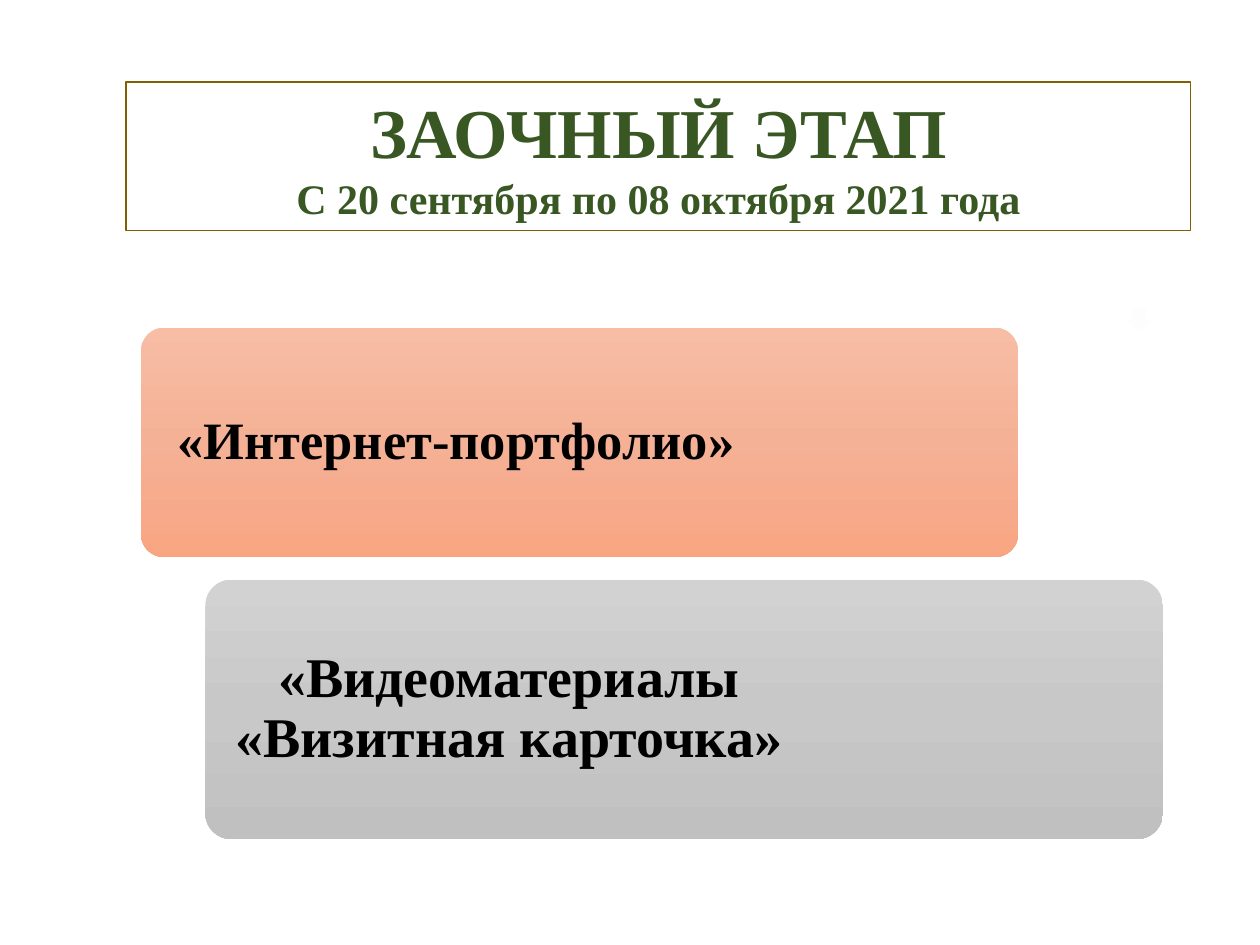
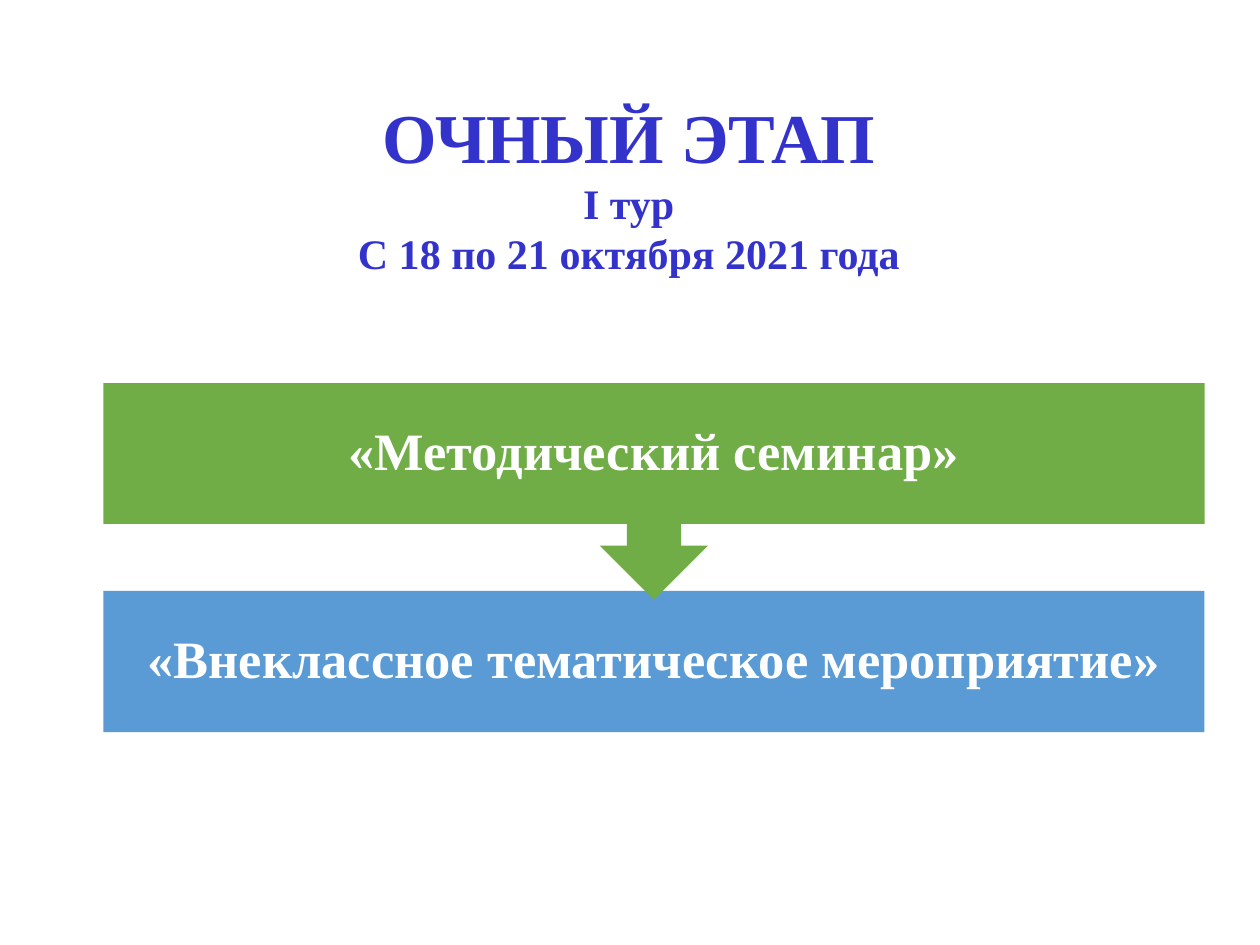
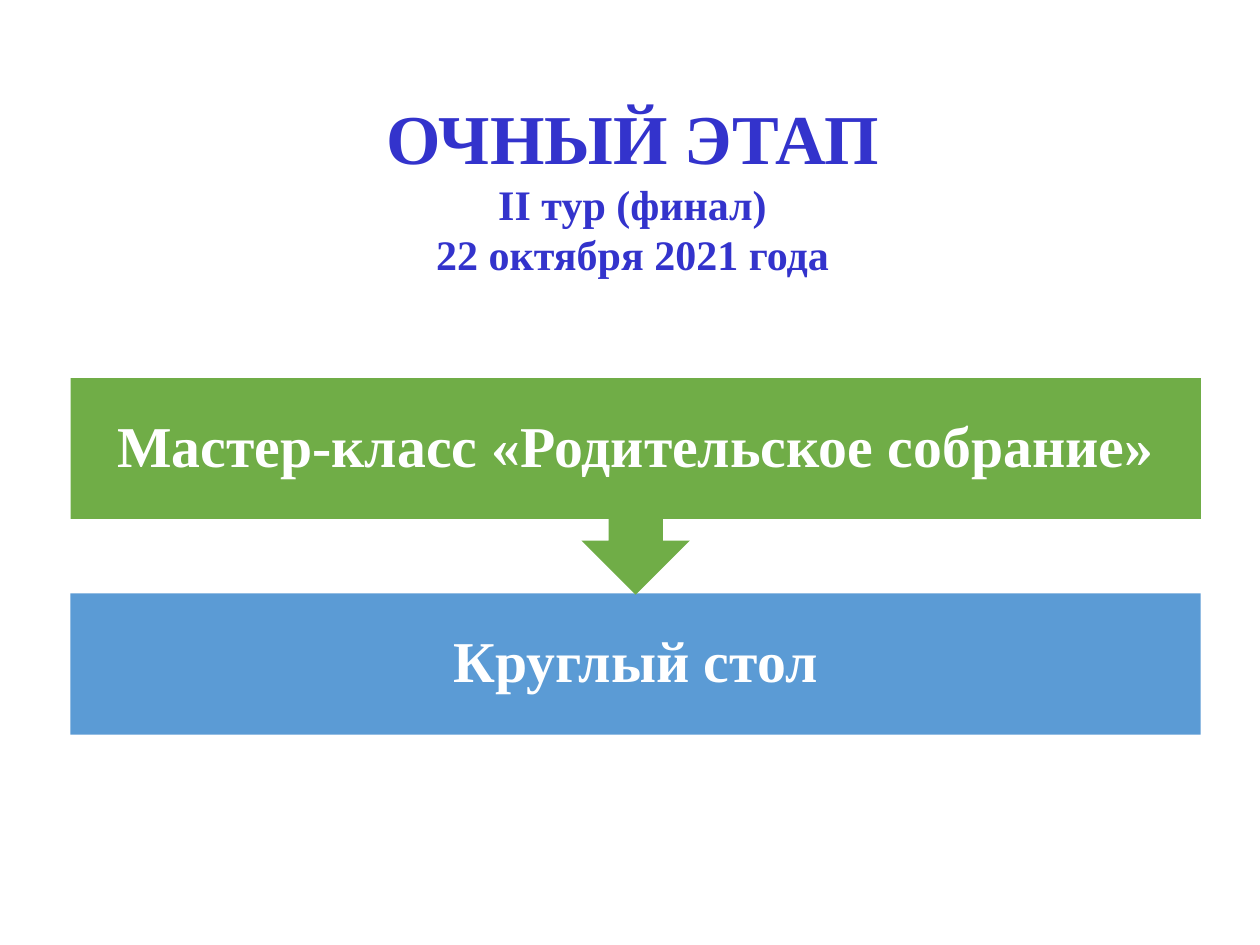
from copy import deepcopy
from pptx import Presentation
from pptx.dml.color import RGBColor
from pptx.enum.shapes import MSO_SHAPE as Shape
from pptx.enum.text import MSO_ANCHOR as Anchor, MSO_AUTO_SIZE as AutoSize, PP_ALIGN as Align
from pptx.util import Inches, Pt

# Shared style
FONT = "Times New Roman"
BLACK, WHITE, FAINT = "000000", "FFFFFF", "FDFDFD"
DARK_GREEN, OLIVE, INDIGO = "385723", "806000", "3333CC"
GREEN, BLUE = "70AD47", "5B9BD5"
PEACH = ("F7BDA5", "F5B196", "F8A582")
GREY = ("D2D2D2", "C8C8C8", "C0C0C0")
TITLE_SIZE, SUBTITLE_SIZE = 40, 24
COLUMNS, ROWS = 100, 75
BAR_HEIGHT, CALLOUT_HEIGHT = 11.2, 17.2


def color(value):
    return RGBColor.from_string(value)


class Builder:
    """Holds the deck, its grid and the current page."""

    def __init__(self):
        self.deck = Presentation()
        self.deck.slide_width, self.deck.slide_height = Inches(10), Inches(7.5)
        self.page = None

    def new_page(self):
        self.page = self.deck.slides.add_slide(self.deck.slide_layouts[6])

    def place(self, left, top, width, height):
        column = self.deck.slide_width / COLUMNS
        row = self.deck.slide_height / ROWS
        return [round(n * unit) for n, unit in
                zip((left, top, width, height), (column, row, column, row))]

    def shape(self, kind, area, fill):
        shape = self.page.shapes.add_shape(kind, *self.place(*area))
        shape.shadow.inherit = False
        shape.line.fill.background()
        if isinstance(fill, str):
            shape.fill.solid()
            shape.fill.fore_color.rgb = color(fill)
        else:
            self.gradient(shape, fill)
        return shape

    def gradient(self, shape, shades):
        """Three even stops from top to bottom."""
        shape.fill.gradient()
        shape.fill.gradient_angle = 270
        first = shape.element.spPr.xpath(".//a:gs")[0]
        first.addnext(deepcopy(first))
        for index, (stop, shade) in enumerate(zip(shape.fill.gradient_stops, shades)):
            stop.color.rgb = color(shade)
            stop.position = index / 2

    def text(self, area, lines, sizes, ink):
        box = self.page.shapes.add_textbox(*self.place(*area))
        frame = box.text_frame
        frame.word_wrap = True
        frame.text = "\n".join(lines)
        for para, size in zip(frame.paragraphs, sizes):
            para.alignment = Align.CENTER
            for span in para.runs:
                span.font.name, span.font.size = FONT, Pt(size)
                span.font.bold, span.font.color.rgb = True, color(ink)
        return box

    def title(self, area, heading, *details, ink=INDIGO):
        sizes = [TITLE_SIZE] + [SUBTITLE_SIZE] * len(details)
        box = self.text(area, (heading, *details), sizes, ink)
        box.text_frame.auto_size = AutoSize.SHAPE_TO_FIT_TEXT
        return box

    def label(self, area, words, size, inset, ink):
        frame = self.text(area, [words], [size], ink).text_frame
        frame.vertical_anchor = Anchor.MIDDLE
        frame.margin_left = frame.margin_right = Inches(inset)
        frame.margin_top = frame.margin_bottom = Inches(inset)
        frame.paragraphs[0].line_spacing = 0.9

    def card(self, area, shades, label_width, words, size, inset):
        left, top, _, height = area
        self.shape(Shape.ROUNDED_RECTANGLE, area, shades).adjustments[0] = 0.1
        edge = 0.6
        self.label((left + edge, top + edge, label_width, height - 2 * edge),
                   words, size, inset, BLACK)

    def flow(self, left, width, callout_top, bar_top, steps, size, inset):
        """A callout pointing down at a bar."""
        first_step, second_step = steps
        bar = (left, bar_top, width, BAR_HEIGHT)
        self.shape(Shape.RECTANGLE, bar, BLUE)
        self.label(bar, second_step, size, inset, WHITE)
        callout = self.shape(Shape.UP_ARROW_CALLOUT,
                             (left, callout_top, width, CALLOUT_HEIGHT), GREEN)
        callout.rotation = 180
        self.label((left, callout_top, width, BAR_HEIGHT), first_step, size, inset, WHITE)


def main():
    builder = Builder()

    # Remote stage
    builder.new_page()
    heading = builder.title((10, 6.5, 84.5, 11.8), "ЗАОЧНЫЙ ЭТАП",
                            "С 20 сентября по 08 октября 2021 года", ink=DARK_GREEN)
    heading.line.color.rgb = color(OLIVE)
    heading.line.width = Pt(0.75)
    builder.card((11.2, 26, 69.6, 18.2), PEACH, 48.8, "«Интернет-портфолио»", 30, 0.12)
    builder.card((16.3, 46, 76, 20.6), GREY, 47,
                 "«Видеоматериалы «Визитная карточка»", 32, 0.13)
    arrow = builder.shape(Shape.DOWN_ARROW, (89.4, 24.5, 2, 1.7), FAINT)
    arrow.adjustments[0], arrow.adjustments[1] = 0.55, 0.45

    # On-site stage, first round
    builder.new_page()
    builder.title((8.2, 6.9, 83.4, 15.8), "ОЧНЫЙ ЭТАП", "I тур",
                  "С 18 по 21 октября 2021 года")
    builder.flow(8.2, 87.4, 30.4, 46.9,
                 ("«Методический семинар»", "«Внеклассное тематическое мероприятие»"),
                 30, 0.23)

    # On-site stage, final
    builder.new_page()
    builder.title((8.5, 7, 83.4, 15.8), "ОЧНЫЙ ЭТАП", "II тур (финал)",
                  "22 октября 2021 года")
    builder.flow(5.6, 89.7, 30, 47.1,
                 ("Мастер-класс «Родительское собрание»", "Круглый стол"), 33, 0.26)

    builder.deck.save("out.pptx")


if __name__ == "__main__":
    main()
